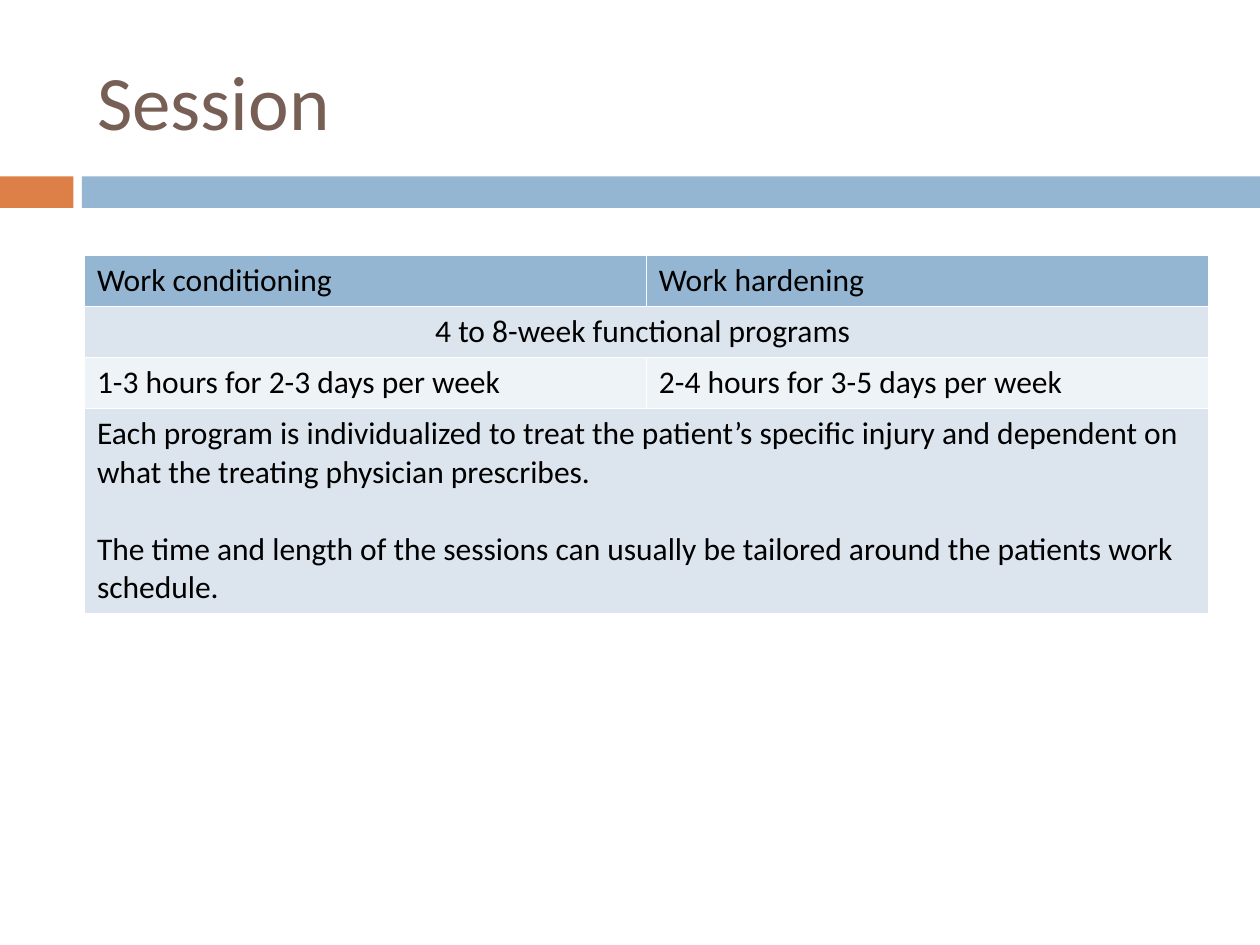
"""Build the session slide comparing work conditioning and work hardening."""
from pptx import Presentation
from pptx.dml.color import RGBColor as RGB
from pptx.enum.shapes import MSO_SHAPE as Shape
from pptx.enum.text import MSO_ANCHOR as Anchor, PP_ALIGN as Align
from pptx.util import Pt

COLORS = {"orange": "DD8047", "blue": "94B6D2", "brown": "775F55",
          "band": "DCE5EE", "pale": "EEF3F7", "black": "000000"}
FONT = "Calibri"
LEFT, WIDTH = 48.24, 642.24
ROW_HEIGHT, LAST_HEIGHT = 29.2, 117

deck = Presentation()
deck.slide_width, deck.slide_height = Pt(720), Pt(540)
page = deck.slides.add_slide(deck.slide_layouts[5])

for left, width, color in [(0, 42, "orange"), (46.8, 673.2, "blue")]:
    bar = page.shapes.add_shape(Shape.RECTANGLE, Pt(left), Pt(100.8), Pt(width), Pt(18))
    bar.shadow.inherit = False
    bar.fill.solid()
    bar.fill.fore_color.rgb = RGB.from_string(COLORS[color])
    bar.line.fill.background()

title = page.shapes.title
title.left, title.top, title.width, title.height = Pt(LEFT), Pt(18), Pt(WIDTH), Pt(77.76)
title.text_frame.text = "Session"
title.text_frame.vertical_anchor = Anchor.MIDDLE
heading = title.text_frame.paragraphs[0]
heading.alignment = Align.LEFT
heading.font.name, heading.font.size = FONT, Pt(44)
heading.font.color.rgb = RGB.from_string(COLORS["brown"])

rows = [
    ("blue", Align.LEFT, ["Work conditioning", "Work hardening"]),
    ("band", Align.CENTER, ["4 to 8-week functional programs "]),
    ("pale", Align.LEFT, ["1-3 hours for 2-3 days per week", "2-4 hours for 3-5 days per week"]),
    ("band", Align.LEFT, [
        "Each program is individualized to treat the patient’s specific injury and "
        "dependent on what the treating physician prescribes.\n"
        "The time and length of the sessions can usually be tailored around the "
        "patients work schedule."]),
]
heights = [ROW_HEIGHT] * (len(rows) - 1) + [LAST_HEIGHT]
table = page.shapes.add_table(len(rows), 2, Pt(LEFT), Pt(145.8), Pt(WIDTH), Pt(sum(heights))).table

for row, (color, alignment, texts) in enumerate(rows):
    table.rows[row].height = Pt(heights[row])
    if len(texts) == 1:
        table.cell(row, 0).merge(table.cell(row, 1))
    for column, text in enumerate(texts):
        cell = table.cell(row, column)
        cell.fill.solid()
        cell.fill.fore_color.rgb = RGB.from_string(COLORS[color])
        cell.text = text
        for number, para in enumerate(cell.text_frame.paragraphs):
            para.alignment = alignment
            para.space_before = Pt(22 * number)
            para.font.name, para.font.size, para.font.bold = FONT, Pt(18), False
            para.font.color.rgb = RGB.from_string(COLORS["black"])

deck.save("out.pptx")
